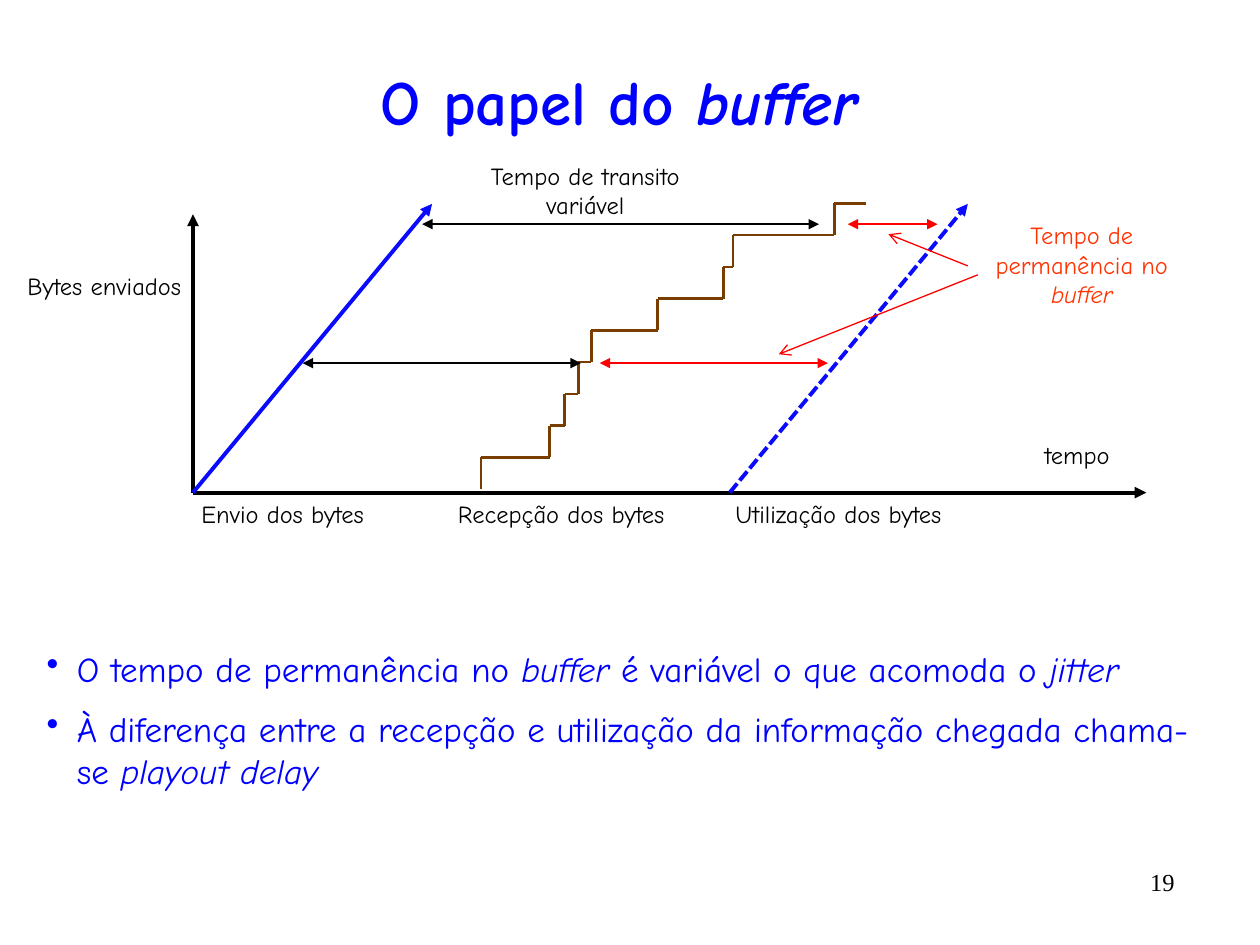
from lxml import etree
from pptx import Presentation
from pptx.dml.color import RGBColor
from pptx.enum.dml import MSO_LINE
from pptx.enum.shapes import MSO_CONNECTOR
from pptx.enum.text import MSO_ANCHOR, MSO_AUTO_SIZE, PP_ALIGN
from pptx.oxml.ns import qn
from pptx.util import Cm, Pt

BLACK = RGBColor(0x00, 0x00, 0x00)
BLUE = RGBColor(0x00, 0x00, 0xFF)
INK = RGBColor(0x0A, 0x0A, 0xFF)
BROWN = RGBColor(0x7A, 0x3D, 0x00)
RED = RGBColor(0xFF, 0x00, 0x00)
ORANGE = RGBColor(0xFF, 0x33, 0x00)

LEFT, CENTER, RIGHT = PP_ALIGN.LEFT, PP_ALIGN.CENTER, PP_ALIGN.RIGHT
TOP, MIDDLE = MSO_ANCHOR.TOP, MSO_ANCHOR.MIDDLE
NO_FIT = MSO_AUTO_SIZE.NONE
STRAIGHT = MSO_CONNECTOR.STRAIGHT
DASH = MSO_LINE.SQUARE_DOT


def write(frame, *lines, font="Comic Neue", size=14, color=BLACK, bold=False,
          align=CENTER, anchor=TOP, bullet=False):
    frame.word_wrap = True
    frame.auto_size = NO_FIT
    frame.vertical_anchor = anchor
    for i, line in enumerate(lines):
        para = frame.add_paragraph() if i else frame.paragraphs[0]
        para.alignment = align
        for j, part in enumerate(line.split("*")):
            if not part:
                continue
            run = para.add_run()
            run.text = part
            run.font.name = font
            run.font.size = Pt(size)
            run.font.bold = bold
            run.font.italic = j % 2 == 1
            run.font.color.rgb = color
        if bullet:
            para.space_before = Pt(size / 2)
            props = para._p.get_or_add_pPr()
            props.set("marL", str(Cm(0.61)))
            props.set("indent", str(-Cm(0.61)))
            etree.SubElement(props, qn("a:buChar"), char="•")


class Board:
    def __init__(self, deck):
        self.slide = deck.slides.add_slide(deck.slide_layouts[5])

    def title(self, text, x, y, w, h):
        shape = self.slide.shapes.title
        shape.left, shape.top, shape.width, shape.height = map(Cm, (x, y, w, h))
        write(shape.text_frame, text, size=36, color=BLUE, bold=True, anchor=MIDDLE)

    def text(self, lines, x, y, w, h, **style):
        box = self.slide.shapes.add_textbox(*map(Cm, (x, y, w, h)))
        write(box.text_frame, *lines, **style)

    def line(self, start, end, color=BLACK, width=1.5, head=None, tail=None, dash=None):
        link = self.slide.shapes.add_connector(STRAIGHT, *map(Cm, (*start, *end)))
        link.line.color.rgb = color
        link.line.width = Pt(width)
        if dash:
            link.line.dash_style = dash
        stroke = link.line._get_or_add_ln()
        for tag, kind in (("a:headEnd", head), ("a:tailEnd", tail)):
            if kind:
                etree.SubElement(stroke, qn(tag), type=kind)
        etree.SubElement(link._element.spPr, qn("a:effectLst"))

    def arrow(self, start, end, color=BLACK, dash=None):
        self.line(start, end, color, 2.25, tail="triangle", dash=dash)

    def span(self, x1, x2, y, color=BLACK):
        self.line((x1, y), (x2, y), color, head="triangle", tail="triangle")

    def stairs(self, edges, base, rise):
        for i, (x, after) in enumerate(zip(edges, edges[1:])):
            low = base - i * rise
            high = low - rise
            self.line((x, low), (x, high), BROWN)
            self.line((x, high), (after, high), BROWN)


def main():
    deck = Presentation()
    deck.slide_width, deck.slide_height = Cm(25.4), Cm(19.05)
    board = Board(deck)

    board.title("O papel do *buffer*", 0.84, 1.07, 23.29, 1.9)
    board.text(["19"], 21.39, 17.35, 2.54, 1.07, font="Times New Roman", align=RIGHT)
    board.text(
        ["O tempo de permanência no *buffer* é variável o que acomoda o *jitter*",
         "À diferença entre a recepção e utilização da informação chegada "
         "chama-se *playout delay*"],
        0.69, 12.93, 23.93, 4.19, size=20, color=BLUE, align=LEFT, bullet=True)

    base, top, mid, high = 9.93, 4.11, 7.32, 4.52
    zero = (3.89, base)
    board.arrow(zero, (23.11, base))
    board.arrow(zero, (3.89, 4.32))
    board.arrow(zero, (8.71, top), INK)
    board.arrow((14.71, base), (19.51, top), INK, DASH)
    board.stairs((9.7, 11.08, 11.38, 11.66, 11.92, 13.26, 14.58, 14.78, 16.82, 17.45),
                 9.86, 0.64)

    board.span(6.1, 11.71, mid)
    board.span(8.51, 16.51, high)
    board.span(12.09, 16.69, mid, RED)
    board.span(17.09, 18.9, high, RED)
    for start, end in (((19.71, 5.54), (15.7, 7.14)), ((19.51, 5.36), (17.91, 4.72))):
        board.line(start, end, RED, 0.75, tail="arrow")

    for text, x, y, w, h in (
        ("tempo", 19.91, 8.74, 3.61, 0.86),
        ("Bytes enviados", 0.3, 5.33, 3.61, 1.45),
        ("Tempo de transito variável", 9.5, 3.12, 4.6, 1.45),
        ("Envio dos bytes", 3.3, base, 4.8, 0.86),
        ("Recepção dos bytes", 8.71, base, 5.21, 0.86),
        ("Utilização dos bytes", 14.3, base, 5.21, 0.86),
    ):
        board.text([text], x, y, w, h)
    board.text(["Tempo de permanência no *buffer*"], 19.51, 4.32, 4.6, 2.06, color=ORANGE)

    deck.save("out.pptx")


if __name__ == "__main__":
    main()
